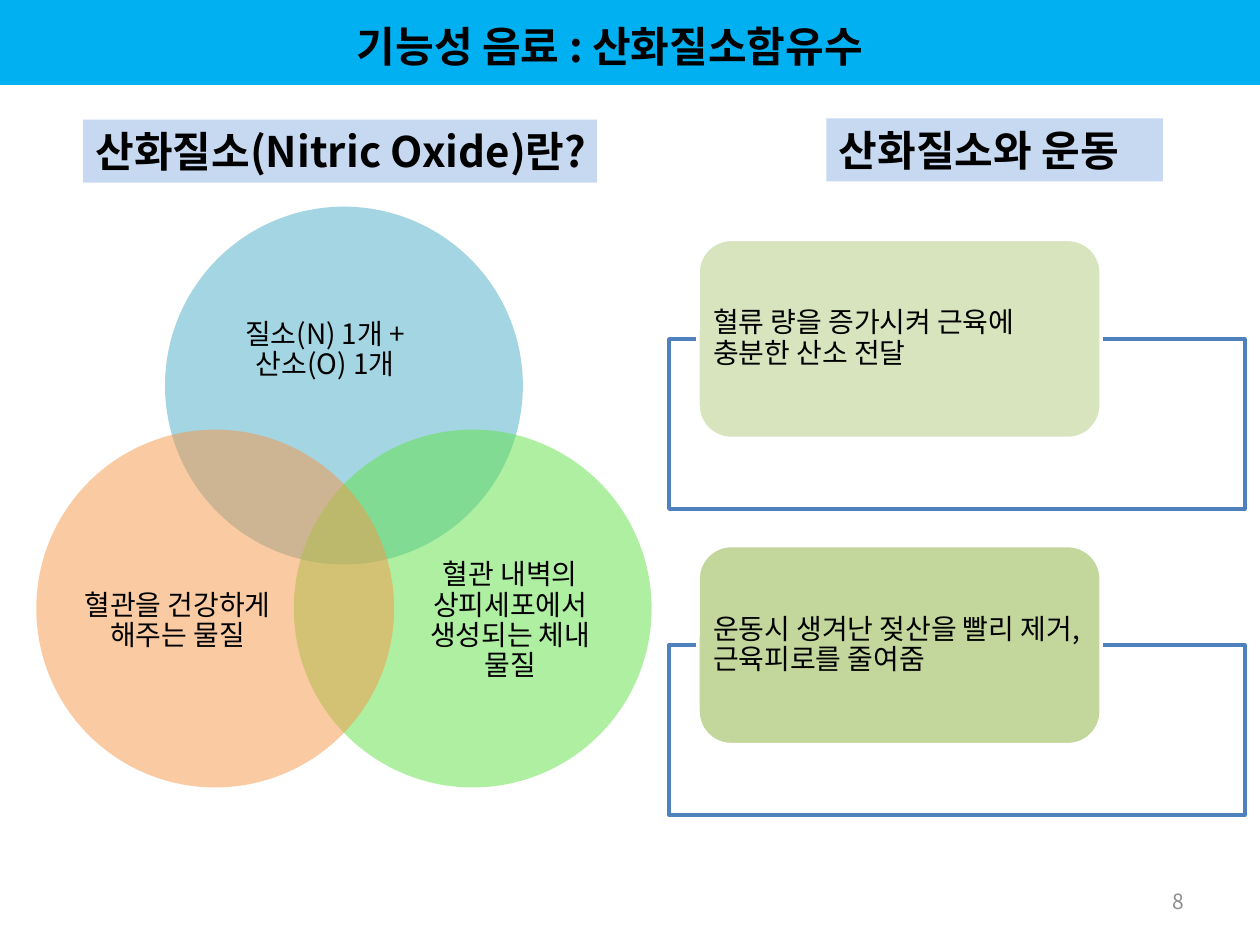
"""Build the nitric oxide slide: a three-circle diagram beside two benefit cards."""
from math import cos, radians, sin

from lxml.etree import SubElement
from pptx import Presentation
from pptx.dml.color import RGBColor
from pptx.enum.shapes import MSO_SHAPE
from pptx.enum.text import MSO_ANCHOR, PP_ALIGN
from pptx.oxml.ns import qn
from pptx.util import Inches, Pt

THEME = {
    "font": "Noto Sans CJK KR",
    "text": "000000", "number": "8C8C8C", "banner": "00B0F0", "heading": "C6D9F1",
    "circles": ("4BACC6", "60E146", "F79646"),
    "cards": ("D7E4BD", "C3D69B"), "frame": "4F81BD", "white": "FFFFFF",
    "title_size": 24, "body_size": 16, "number_size": 12, "line": 2,
}

presentation = Presentation()
presentation.slide_width, presentation.slide_height = Inches(10), Inches(7.5)
slide = presentation.slides.add_slide(presentation.slide_layouts[6])
CELL = presentation.slide_width / 100


def add_block(kind, columns, rows, width, height, fill=None, line=None, opacity=100):
    """Place a shape on the grid of 100 columns by 75 rows."""
    shape = slide.shapes.add_shape(
        kind, *(round(cells * CELL) for cells in (columns, rows, width, height)))
    shape.shadow.inherit = False
    if fill:
        shape.fill.solid()
        shape.fill.fore_color.rgb = RGBColor.from_string(fill)
        if opacity < 100:
            color = shape.fill._xPr.find(qn("a:solidFill"))[0]
            SubElement(color, qn("a:alpha")).set("val", str(opacity * 1000))
    else:
        shape.fill.background()
    if line:
        shape.line.color.rgb = RGBColor.from_string(line)
        shape.line.width = Pt(THEME["line"])
    else:
        shape.line.fill.background()
    return shape


def write(shape, lines, size, color=THEME["text"], bold=False, align=PP_ALIGN.LEFT,
          spacing=1.0, **frame_format):
    """Write one paragraph per line and apply the frame's format values."""
    frame = shape.text_frame
    values = {"word_wrap": True, "vertical_anchor": MSO_ANCHOR.MIDDLE, **frame_format}
    for name, value in values.items():
        setattr(frame, name, value)
    frame.text = "\n".join(lines)
    for paragraph in frame.paragraphs:
        paragraph.alignment, paragraph.line_spacing = align, spacing
        font = paragraph.runs[0].font
        for name, value in {"size": Pt(size), "bold": bold, "name": THEME["font"]}.items():
            setattr(font, name, value)
        font.color.rgb = RGBColor.from_string(color)
        SubElement(font._element, qn("a:ea")).set("typeface", THEME["font"])
    return frame


NO_MARGINS = dict.fromkeys(("margin_left", "margin_top", "margin_right", "margin_bottom"), 0)
CARD_MARGINS = {**NO_MARGINS, "margin_left": Inches(0.12), "margin_right": Inches(0.12)}

DIAMETER, ORBIT = 28.4, 11.8
CENTER_COLUMN, CENTER_ROW = 27.3, 42.4
circles = (
    (-90, (27.3, 27.8), (20.8, 12.8), ("질소(N) 1개 +", "산소(O) 1개")),
    (30, (40.5, 49.3), (17, 15.6), ("혈관 내벽의 상피세포에서 생성되는 체내 물질",)),
    (150, (14.1, 49.3), (17, 15.6), ("혈관을 건강하게 해주는 물질",)),
)
for (angle, (column, row), (width, height), lines), color in zip(circles, THEME["circles"]):
    left = CENTER_COLUMN + ORBIT * cos(radians(angle)) - DIAMETER / 2
    top = CENTER_ROW + ORBIT * sin(radians(angle)) - DIAMETER / 2
    add_block(MSO_SHAPE.OVAL, left, top, DIAMETER, DIAMETER, color, opacity=50)
    label = add_block(MSO_SHAPE.RECTANGLE, column - width / 2, row - height / 2, width, height)
    label_frame = write(label, lines, THEME["body_size"], align=PP_ALIGN.CENTER,
                        spacing=0.9, **NO_MARGINS)
    if len(lines) > 1:
        label_frame.paragraphs[0]._p.get_or_add_pPr().set("marR", str(Inches(0.3)))

headings = (
    (6.6, 9.5, 40.8, "산화질소(Nitric Oxide)란?"),
    (65.6, 9.4, 26.7, "산화질소와 운동"),
)
for left, top, width, text in headings:
    heading = add_block(MSO_SHAPE.RECTANGLE, left, top, width, 5, THEME["heading"])
    write(heading, (text,), THEME["title_size"], bold=True, word_wrap=False,
          vertical_anchor=MSO_ANCHOR.TOP)

CARD_TOP, CARD_PITCH = 19, 24.3
benefits = (
    "혈류 량을 증가시켜 근육에 충분한 산소 전달",
    "운동시 생겨난 젖산을 빨리 제거, 근육피로를 줄여줌",
)
for index, (text, color) in enumerate(zip(benefits, THEME["cards"])):
    top = CARD_TOP + index * CARD_PITCH
    add_block(MSO_SHAPE.RECTANGLE, 53.1, top + 7.9, 45.7, 13.5,
              THEME["white"], THEME["frame"], opacity=90)
    card = add_block(MSO_SHAPE.ROUNDED_RECTANGLE, 55.4, top, 32, 15.8, color, THEME["white"])
    label = add_block(MSO_SHAPE.RECTANGLE, 55.4, top, 32, 15.8)
    write(label, (text,), THEME["body_size"], spacing=0.9, **CARD_MARGINS)

add_block(MSO_SHAPE.RECTANGLE, 0, 0, 100, 6.6, THEME["banner"], THEME["banner"])
number = add_block(MSO_SHAPE.RECTANGLE, 71.7, 69.5, 23.3, 4)
write(number, ("8",), THEME["number_size"], THEME["number"], align=PP_ALIGN.RIGHT)
title = add_block(MSO_SHAPE.ROUNDED_RECTANGLE, 23.4, 0.9, 50, 5.5)
write(title, ("기능성 음료 : 산화질소함유수",), THEME["title_size"], bold=True,
      align=PP_ALIGN.CENTER)

presentation.save("out.pptx")
